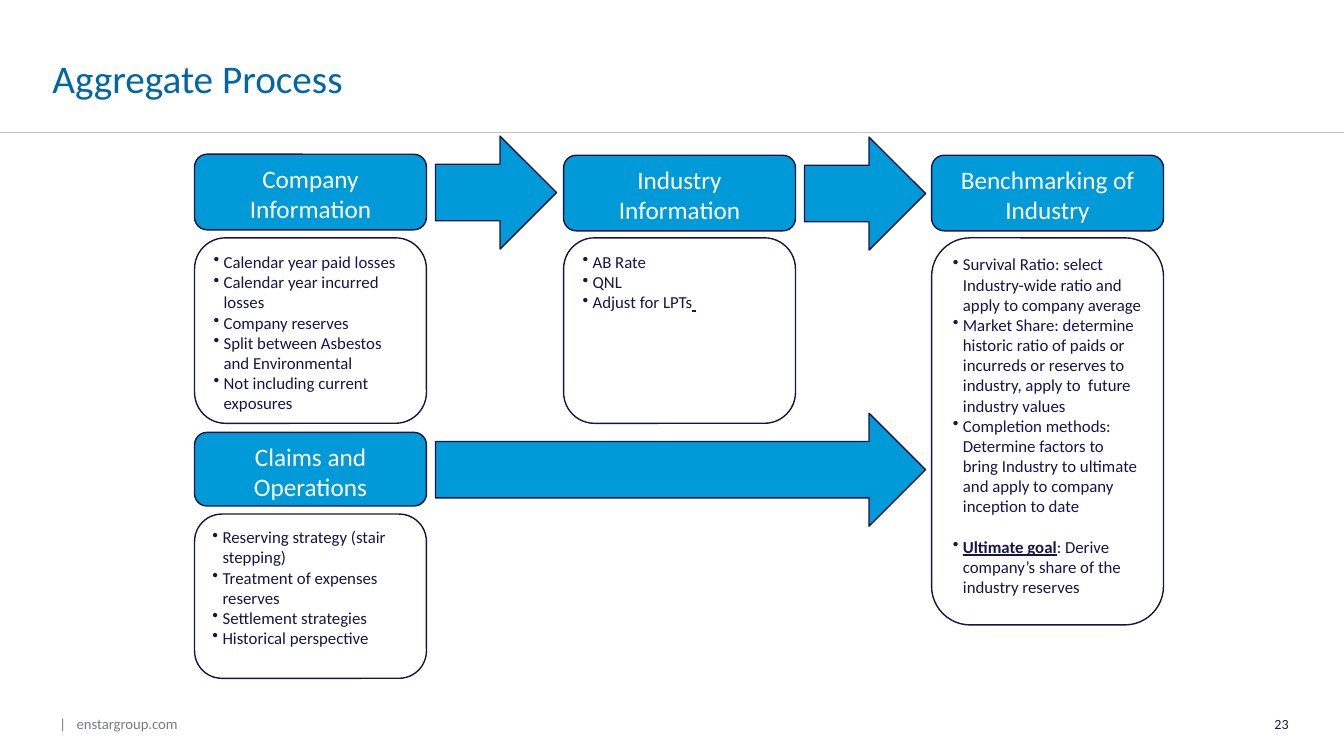
"""Build the Aggregate Process slide: headed cards joined by block arrows."""
from pptx import Presentation
from pptx import util as u
from pptx.dml.color import RGBColor
from pptx.enum import shapes, text
from pptx.oxml import ns
from lxml import etree

BLUE = RGBColor(0x00, 0x9A, 0xD9)
TITLE_BLUE = RGBColor(0x00, 0x66, 0xA5)
NAVY = RGBColor(0x17, 0x14, 0x49)
GREY = RGBColor(0x78, 0x7C, 0x82)
RULE_GREY = RGBColor(0xC6, 0xC6, 0xC5)
WHITE = RGBColor(0xFF, 0xFF, 0xFF)
FONT = "Calibri"

CARD_WIDTH = 2.3
COLUMNS = [1.93, 5.59, 9.24]
BODY_TOP = 2.36
ARROW_HEIGHT = 1.12

presentation = Presentation()
presentation.slide_width = u.Inches(13.33)
presentation.slide_height = u.Inches(7.5)
slide = presentation.slides.add_slide(presentation.slide_layouts[6])


def add_block(preset, left, top, width, height, fill=None):
    """Add an outlined shape, filled or hollow."""
    shape = slide.shapes.add_shape(
        preset, u.Inches(left), u.Inches(top), u.Inches(width), u.Inches(height))
    shape.shadow.inherit = False
    if fill is None:
        shape.fill.background()
    else:
        shape.fill.solid()
        shape.fill.fore_color.rgb = fill
    shape.line.color.rgb = NAVY
    shape.line.width = u.Pt(1)
    shape.text_frame.vertical_anchor = text.MSO_ANCHOR.TOP
    return shape


def style_paragraph(paragraph, size, color, align=text.PP_ALIGN.LEFT):
    """Set the alignment and the font of every run."""
    paragraph.alignment = align
    for run in paragraph.runs:
        run.font.name = FONT
        run.font.size = u.Pt(size)
        run.font.color.rgb = color


rule = slide.shapes.add_connector(
    shapes.MSO_CONNECTOR.STRAIGHT,
    u.Inches(0), u.Inches(1.31), u.Inches(13.33), u.Inches(1.31))
rule.line.color.rgb = RULE_GREY
rule.line.width = u.Pt(0.75)
etree.SubElement(rule._element.spPr, ns.qn("a:effectLst"))

LEFT, RIGHT = text.PP_ALIGN.LEFT, text.PP_ALIGN.RIGHT
TOP, MIDDLE = text.MSO_ANCHOR.TOP, text.MSO_ANCHOR.MIDDLE
labels = [
    ("Aggregate Process", 0.52, 0.39, 9.98, 0.76, 0.2, TOP, 28, TITLE_BLUE, LEFT),
    ("|\tenstargroup.com", 0.59, 7.04, 3.16, 0.28, 0, MIDDLE, 10.5, GREY, LEFT),
    ("23", 11.94, 6.98, 0.84, 0.4, 0.05, MIDDLE, 10, NAVY, RIGHT),
]
for words, left, top, width, height, inset, anchor, size, color, align in labels:
    box = slide.shapes.add_textbox(
        u.Inches(left), u.Inches(top), u.Inches(width), u.Inches(height))
    frame = box.text_frame
    frame.word_wrap = True
    frame.vertical_anchor = anchor
    frame.margin_left = frame.margin_right = 0
    frame.margin_top = u.Inches(inset)
    frame.margin_bottom = u.Inches(min(inset, 0.05))
    paragraph = frame.paragraphs[0]
    paragraph.text = words
    if "\t" in words:
        tabs = etree.SubElement(paragraph._p.get_or_add_pPr(), ns.qn("a:tabLst"))
        etree.SubElement(tabs, ns.qn("a:tab"), pos=str(u.Inches(0.17)), algn="l")
    if size == 28:
        paragraph.line_spacing = 0.9
    style_paragraph(paragraph, size, color, align)

for left, top, width in [(4.32, 1.35, 1.2), (7.98, 1.36, 1.2), (4.32, 4.1, 4.86)]:
    add_block(shapes.MSO_SHAPE.RIGHT_ARROW, left, top, width, ARROW_HEIGHT, BLUE)

cards = [
    ("Company Information", COLUMNS[0], 1.53, 0.75, BODY_TOP, 1.84, [
        "Calendar year paid losses",
        "Calendar year incurred losses",
        "Company reserves",
        "Split between Asbestos and Environmental",
        "Not including current exposures"]),
    ("Claims and Operations", COLUMNS[0], 4.29, 0.73, 5.1, 1.63, [
        "Reserving strategy (stair stepping)",
        "Treatment of expenses reserves",
        "Settlement strategies",
        "Historical perspective"]),
    ("Industry Information", COLUMNS[1], 1.54, 0.75, BODY_TOP, 1.84, [
        "AB Rate",
        "QNL",
        "Adjust for LPTs"]),
    ("Benchmarking of Industry", COLUMNS[2], 1.54, 0.75, BODY_TOP, 3.84, [
        "Survival Ratio: select Industry-wide ratio and apply to company average",
        "Market Share: determine historic ratio of paids or incurreds or reserves "
        "to industry, apply to  future industry values",
        "Completion methods: Determine factors to bring Industry to ultimate "
        "and apply to company inception to date",
        "Ultimate goal"]),
]
emphasis = {"Adjust for LPTs": " ", "Ultimate goal": ": Derive company’s share of the industry reserves"}

for heading, left, top, height, body_top, body_height, bullets in cards:
    header = add_block(
        shapes.MSO_SHAPE.ROUNDED_RECTANGLE, left, top, CARD_WIDTH, height, BLUE)
    header.text_frame.text = heading
    style_paragraph(header.text_frame.paragraphs[0], 18, WHITE, text.PP_ALIGN.CENTER)

    body = add_block(
        shapes.MSO_SHAPE.ROUNDED_RECTANGLE, left, body_top, CARD_WIDTH, body_height)
    body.text_frame.text = "\n".join(bullets)
    for paragraph, words in zip(body.text_frame.paragraphs, bullets):
        properties = paragraph._p.get_or_add_pPr()
        properties.set("marL", str(u.Inches(0.1)))
        properties.set("indent", str(u.Inches(-0.1)))
        etree.SubElement(properties, ns.qn("a:buChar"), char="•")
        if words in emphasis:
            paragraph.add_run().text = emphasis[words]
            marked = paragraph.runs[0 if words == "Ultimate goal" else 1]
            marked.font.bold = marked.font.underline = True
        if words == "Ultimate goal":
            paragraph.space_before = u.Pt(14.5)
        style_paragraph(paragraph, 12, NAVY)

presentation.save("out.pptx")
